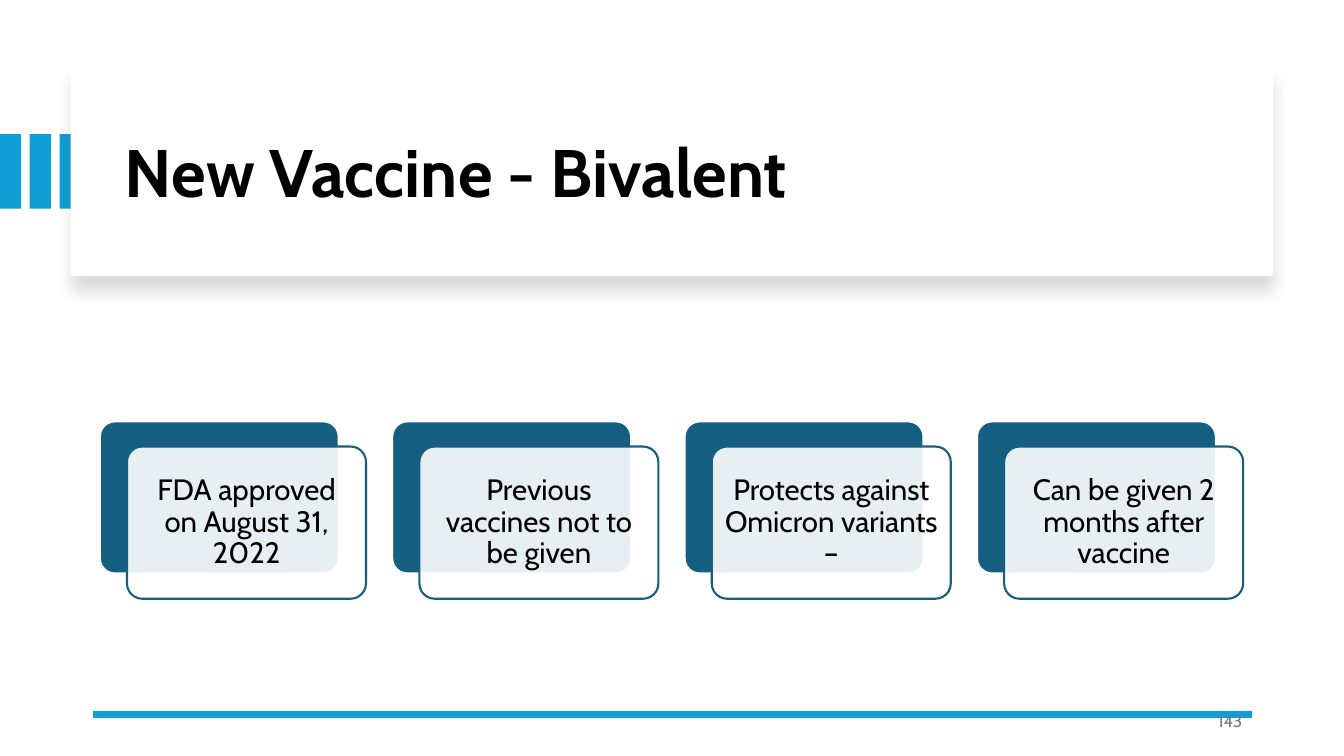
from dataclasses import dataclass

from lxml.etree import SubElement
from pptx import Presentation
from pptx.dml.color import RGBColor
from pptx.enum.shapes import MSO_CONNECTOR, MSO_SHAPE
from pptx.enum.text import MSO_ANCHOR, PP_ALIGN
from pptx.oxml.ns import qn
from pptx.util import Inches, Pt


@dataclass(frozen=True)
class Theme:
    font: str = "Cabin"
    black: str = "000000"
    white: str = "FFFFFF"
    blue: str = "0F9ED5"
    teal: str = "156082"
    gray: str = "797979"
    title: int = 48
    body: int = 21
    small: int = 12


def apply(target, values):
    for name, value in values.items():
        setattr(target, name, value)


class Board:
    def __init__(self, slide, theme):
        self.slide, self.theme = slide, theme

    def box(self, at, fill, line=None, round=False, alpha=None):
        kind = MSO_SHAPE.ROUNDED_RECTANGLE if round else MSO_SHAPE.RECTANGLE
        shape = self.slide.shapes.add_shape(kind, *map(Inches, at))
        shape.shadow.inherit = False
        if round:
            shape.adjustments[0] = 0.1
        shape.fill.solid()
        shape.fill.fore_color.rgb = RGBColor.from_string(fill)
        if alpha:
            color = shape.fill._xPr.find(qn("a:solidFill"))[0]
            SubElement(color, qn("a:alpha"), val=str(alpha * 1000))
        if line:
            shape.line.color.rgb = RGBColor.from_string(line)
            shape.line.width = Pt(1.5)
        else:
            shape.line.fill.background()
        return shape

    def shade(self, shape, blur, dist, alpha):
        effects = shape._element.spPr.find(qn("a:effectLst"))
        shadow = SubElement(effects, qn("a:outerShdw"), blurRad=str(Pt(blur)),
                            dist=str(Pt(dist)), dir="5400000", rotWithShape="0")
        color = SubElement(shadow, qn("a:srgbClr"), val=self.theme.black)
        SubElement(color, qn("a:alpha"), val=str(alpha * 1000))

    def text(self, at, words, size, color, inset=None, bold=False, **layout):
        frame = self.slide.shapes.add_textbox(*map(Inches, at)).text_frame
        apply(frame, {"word_wrap": True, "vertical_anchor": MSO_ANCHOR.MIDDLE})
        if inset:
            sides = ("left", "top", "right", "bottom")
            apply(frame, {f"margin_{side}": Inches(inset) for side in sides})
        para = frame.paragraphs[0]
        apply(para, layout)
        run = para.add_run()
        run.text = words
        apply(run.font, {"name": self.theme.font, "size": Pt(size), "bold": bold})
        run.font.color.rgb = RGBColor.from_string(color)

    def rule(self, start, end, color, width):
        line = self.slide.shapes.add_connector(
            MSO_CONNECTOR.STRAIGHT, *map(Inches, start + end))
        line.line.color.rgb = RGBColor.from_string(color)
        line.line.width = Pt(width)
        SubElement(line._element.spPr, qn("a:effectLst"))

    def card(self, left, top, words):
        theme = self.theme
        wide, high = 2.37, 1.51
        self.box((left, top, wide, high), theme.teal, theme.white, round=True)
        left, top = left + 0.27, top + 0.25
        self.box((left, top, wide, high), theme.white, theme.teal, round=True, alpha=90)
        self.text((left + 0.04, top + 0.04, wide - 0.08, high - 0.08), words,
                  theme.body, theme.black, inset=0.09,
                  alignment=PP_ALIGN.CENTER, line_spacing=0.9)


def main():
    deck = Presentation()
    apply(deck, {"slide_width": Inches(13.33), "slide_height": Inches(7.5)})
    theme = Theme()
    board = Board(deck.slides.add_slide(deck.slide_layouts[6]), theme)

    # Accent bars, tucked behind the title panel
    for i in range(3):
        board.box((0.295 * i, 1.33, 0.21, 0.74), theme.blue)

    # Title panel
    panel = board.box((0.7, 0.67, 11.93, 2.07), theme.white)
    board.shade(panel, blur=11, dist=10, alpha=15)
    board.text((1.14, 0.89, 11.13, 1.7), "New Vaccine - Bivalent",
               theme.title, theme.black, bold=True, line_spacing=0.9)

    # Footer rule
    board.rule((12.42, 7.09), (0.92, 7.09), theme.blue, 4.5)

    # Row of fact cards
    facts = (
        "FDA approved on August 31, 2022",
        "Previous vaccines not to be given",
        "Protects against Omicron variants –",
        "Can be given 2 months after vaccine",
    )
    for i, fact in enumerate(facts):
        board.card(0.99 + 2.9 * i, 4.18, fact)

    # Page number
    board.text((9.42, 6.95, 3, 0.4), "143", theme.small, theme.gray,
               alignment=PP_ALIGN.RIGHT)

    deck.save("out.pptx")


if __name__ == "__main__":
    main()
